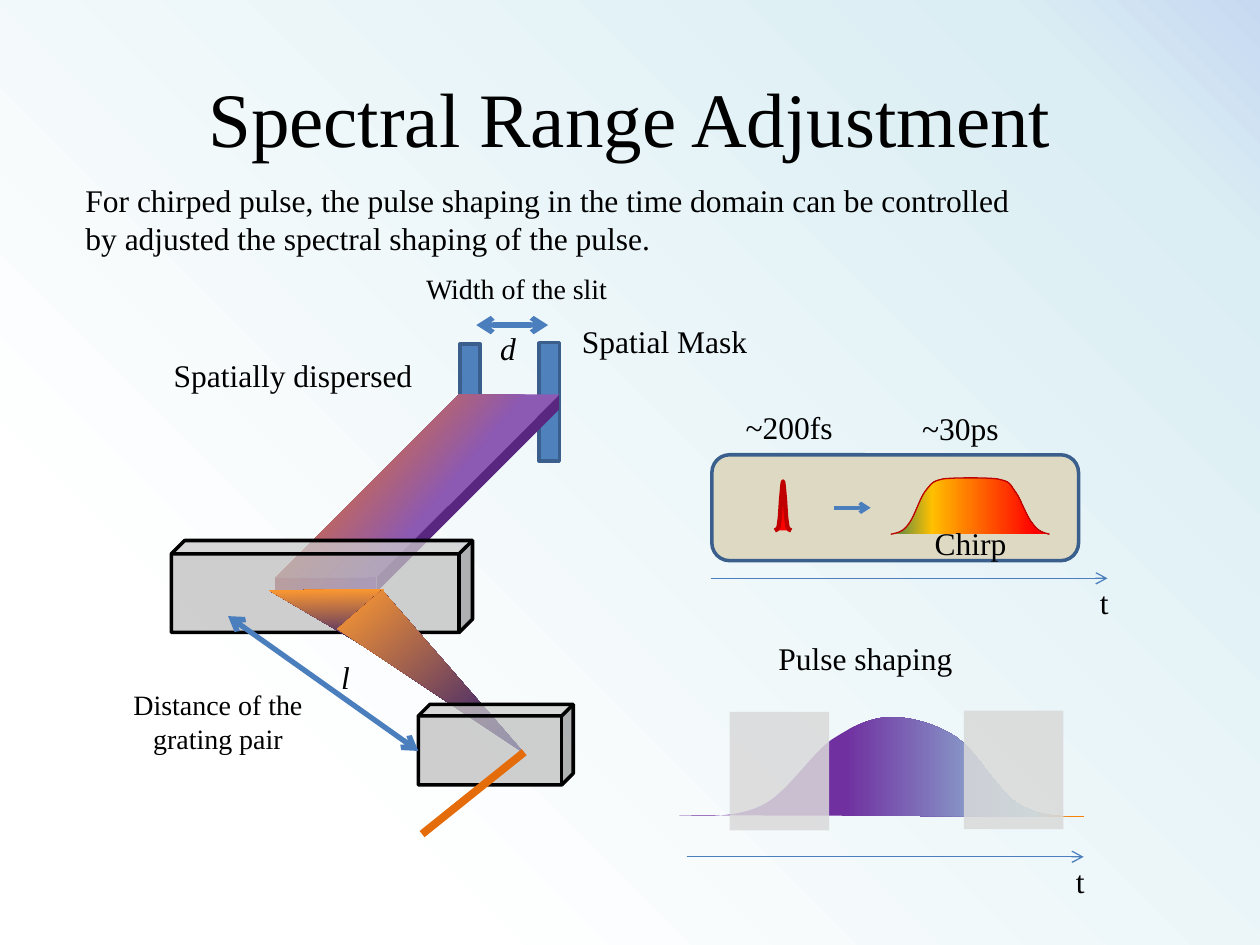
from lxml.etree import SubElement
from pptx import Presentation
from pptx.dml.color import RGBColor
from pptx.enum.shapes import MSO_CONNECTOR, MSO_SHAPE as SHAPE
from pptx.enum.text import MSO_ANCHOR, MSO_AUTO_SIZE, PP_ALIGN as ALIGN
from pptx.oxml.ns import qn
from pptx.util import Inches, Pt

FONT = "Times New Roman"
BLACK = RGBColor(0x00, 0x00, 0x00)
WHITE = RGBColor(0xFF, 0xFF, 0xFF)
SKY = RGBColor(0xC6, 0xD9, 0xF1)
AQUA = RGBColor(0xDB, 0xEE, 0xF4)
BLUE = RGBColor(0x4F, 0x81, 0xBD)
ARROW = RGBColor(0x4B, 0x7E, 0xBC)
EDGE = RGBColor(0x3A, 0x5F, 0x8C)
TAN = RGBColor(0xDD, 0xD9, 0xC3)
SILVER = RGBColor(0xD9, 0xD9, 0xD9)
GRAY = RGBColor(0xBF, 0xBF, 0xBF)
PURPLE = RGBColor(0x70, 0x30, 0xA0)
TEAL = RGBColor(0x93, 0xCD, 0xDD)
ORANGE = RGBColor(0xFF, 0x82, 0x00)
BRICK = RGBColor(0xAD, 0x40, 0x3D)
NAVY = RGBColor(0x00, 0x00, 0x82)
AMBER = RGBColor(0xFF, 0x9A, 0x30)
OLIVE = RGBColor(0x77, 0x93, 0x3C)
GOLD = RGBColor(0xFF, 0xC0, 0x00)
RED = RGBColor(0xFF, 0x00, 0x00)
DARK_RED = RGBColor(0xC0, 0x00, 0x00)
BEAM = RGBColor(0xE4, 0x6C, 0x0A)


def set_gradient(fill, element, stops, angle):
    fill.gradient()
    fill.gradient_angle = (360 - angle) % 360
    gs_list = element.find(".//" + qn("a:gsLst"))
    for gs in list(gs_list):
        gs_list.remove(gs)
    for pos, color in stops:
        gs = SubElement(gs_list, qn("a:gs"), pos=str(pos * 1000))
        SubElement(gs, qn("a:srgbClr"), val=str(color))


def style(s, color=None, alpha=None, stops=None, angle=0, line=None, width=2):
    s.shadow.inherit = False
    if stops:
        set_gradient(s.fill, s.element, stops, angle)
    else:
        s.fill.solid()
        s.fill.fore_color.rgb = color
    if alpha:
        clr = s.element.spPr.find(qn("a:solidFill")).find(qn("a:srgbClr"))
        SubElement(clr, qn("a:alpha"), val=str(alpha * 1000))
    if line is None:
        s.line.fill.background()
    else:
        s.line.color.rgb = line
        s.line.width = Pt(width)
    return s


def add_shape(shapes, kind, x, y, w, h, adj=None, **look):
    s = shapes.add_shape(kind, Inches(x), Inches(y), Inches(w), Inches(h))
    if adj is not None:
        s.adjustments[0] = adj
    return style(s, **look)


def add_line(shapes, x1, y1, x2, y2, width, color=ARROW, ends=("tailEnd",)):
    c = shapes.add_connector(MSO_CONNECTOR.STRAIGHT, Inches(x1), Inches(y1),
                             Inches(x2), Inches(y2))
    c.line.color.rgb = color
    c.line.width = Pt(width)
    ln = c.element.spPr.find(qn("a:ln"))
    for end in ends:
        SubElement(ln, qn("a:" + end), type="arrow")
    SubElement(c.element.spPr, qn("a:effectLst"))


def add_text(shapes, text, x, y, w, h=0.4, size=18, align=ALIGN.LEFT,
             italic=False, wrap=True):
    s = shapes.add_textbox(Inches(x), Inches(y), Inches(w), Inches(h))
    tf = s.text_frame
    tf.word_wrap = wrap
    tf.auto_size = MSO_AUTO_SIZE.SHAPE_TO_FIT_TEXT
    tf.text = text
    p = tf.paragraphs[0]
    p.alignment = align
    r = p.runs[0]
    r.font.name, r.font.size, r.font.italic = FONT, Pt(size), italic
    r.font.color.rgb = BLACK
    return tf


def add_outline(shapes, x, y, points, **look):
    pts = [(Inches(x + px), Inches(y + py)) for px, py in points]
    builder = shapes.build_freeform(*pts[0])
    builder.add_line_segments(pts[1:], close=False)
    return style(builder.convert_to_shape(), **look)


def bezier(points, steps=12):
    curve = [points[0]]
    for i in range(0, len(points) - 1, 3):
        quad = points[i:i + 4]
        for n in range(1, steps + 1):
            t = n / steps
            weights = ((1 - t) ** 3, 3 * t * (1 - t) ** 2, 3 * t * t * (1 - t), t ** 3)
            curve.append(tuple(sum(k * p[axis] for k, p in zip(weights, quad))
                               for axis in (0, 1)))
    return curve


def time_axis(shapes, x, y):
    add_line(shapes, x, y, x + 3.15, y, 0.75)
    add_text(shapes, "t", x + 2.99, y - 0.01, 0.39)


def heading(shapes, x, y):
    tf = add_text(shapes, "Spectral Range Adjustment", x, y, 9, 1.25, 44, ALIGN.CENTER)
    tf.auto_size = MSO_AUTO_SIZE.NONE
    tf.vertical_anchor = MSO_ANCHOR.MIDDLE
    add_text(shapes, "For chirped pulse, the pulse shaping in the time domain can be "
             "controlled by adjusted the spectral shaping of the pulse.",
             x + 0.08, y + 1.09, 7.75, 0.71)


def shaping_plot(shapes, x, y):
    pulse = [(0, 1.45), (0.22, 1.46), (0.45, 1.47), (0.66, 1.37), (0.86, 1.27),
             (1.04, 0.97), (1.21, 0.85), (1.38, 0.74), (1.51, 0.68), (1.67, 0.67),
             (1.84, 0.67), (2.03, 0.72), (2.2, 0.83), (2.37, 0.95), (2.52, 1.25),
             (2.69, 1.36), (2.86, 1.46), (3.03, 1.46), (3.21, 1.46)]
    add_outline(shapes, x, y, bezier(pulse),
                stops=[(41, PURPLE), (88, TEAL), (97, ORANGE)])
    for dx, dy in ((0.4, 0.63), (2.26, 0.62)):
        add_shape(shapes, SHAPE.RECTANGLE, x + dx, y + dy, 0.79, 0.94,
                  color=SILVER, alpha=85)
    time_axis(shapes, x + 0.06, y + 1.78)
    add_text(shapes, "Pulse shaping", x + 0.69, y, 1.6, wrap=False)


def chirp_panel(shapes, x, y):
    add_shape(shapes, SHAPE.ROUNDED_RECTANGLE, x, y, 2.91, 0.84, color=TAN, line=EDGE)
    chirped = [(0, 0.45), (0.05, 0.44), (0.1, 0.43), (0.14, 0.37), (0.19, 0.31),
               (0.23, 0.16), (0.28, 0.1), (0.33, 0.04), (0.33, 0.03), (0.42, 0.01),
               (0.52, 0), (0.75, 0), (0.84, 0.01), (0.94, 0.03), (0.94, 0.04),
               (0.98, 0.1), (1.03, 0.16), (1.08, 0.32), (1.13, 0.37), (1.17, 0.43),
               (1.22, 0.44), (1.26, 0.45)]
    add_outline(shapes, x + 1.42, y + 0.18, bezier(chirped), line=DARK_RED, width=0.75,
                stops=[(7, OLIVE), (26, GOLD), (46, ORANGE), (91, RED)])
    rise = [(0, 0.39), (0.02, 0.38), (0.03, 0.36), (0.04, 0.29), (0.05, 0.14),
            (0.06, 0.03)]
    fall = [(0.13 - px, py) for px, py in reversed(rise)]
    add_outline(shapes, x + 0.5, y + 0.21, rise + [(0.065, 0)] + fall,
                color=RED, line=DARK_RED, width=2.5)
    add_line(shapes, x + 0.97, y + 0.42, x + 1.26, y + 0.42, 2)
    add_text(shapes, "Chirp", x + 1.67, y + 0.5, 1.2)
    time_axis(shapes, x - 0.01, y + 0.98)
    add_text(shapes, "~200fs", x + 0.17, y - 0.42, 1.13)
    add_text(shapes, "~30ps", x + 1.57, y - 0.41, 1.13)


def grating(shapes, x, y, w, h):
    add_shape(shapes, SHAPE.CUBE, x, y, w, h, adj=0.145, color=GRAY, alpha=75, line=BLACK)


def grating_setup(shapes, x, y):
    for dx, dy in ((2.78, 0.62), (3.41, 0.61)):
        add_shape(shapes, SHAPE.RECTANGLE, x + dx, y + dy, 0.16, 0.94,
                  color=BLUE, line=EDGE)
    add_shape(shapes, SHAPE.CUBE, x + 1.32, y + 1.02, 2.25, 1.57, adj=0.925,
              stops=[(44, PURPLE), (66, BRICK)], angle=220)
    grating(shapes, x + 0.49, y + 2.18, 2.39, 0.73)
    fan = shapes.add_group_shape().shapes
    for dx, dy, w, h, turn in ((1.45, 2.39, 0.55, 0.91, 89.3),
                               (1.69, 3.14, 1.72, 0.47, 48.9)):
        s = add_shape(fan, SHAPE.RIGHT_TRIANGLE, x + dx, y + dy, w, h,
                      stops=[(0, NAVY), (100, AMBER)], angle=180)
        s.rotation = turn
        s.element.spPr.find(qn("a:xfrm")).set("flipV", "1")
    grating(shapes, x + 2.45, y + 3.48, 1.23, 0.64)
    add_line(shapes, x + 3.29, y + 3.86, x + 2.48, y + 4.51, 4.5, BEAM, ())

    both = ("headEnd", "tailEnd")
    add_line(shapes, x + 0.94, y + 2.78, x + 2.45, y + 3.85, 3, ends=both)
    add_line(shapes, x + 2.91, y + 0.47, x + 3.48, y + 0.47, 3, ends=both)
    add_text(shapes, "Spatially dispersed", x + 0.41, y + 0.67, 2.12, wrap=False)
    add_text(shapes, "Spatial Mask", x + 3.65, y + 0.4, 1.53, wrap=False)
    add_text(shapes, "d", x + 3, y + 0.45, 0.39, italic=True)
    add_text(shapes, "l", x + 1.74, y + 3.06, 0.39, italic=True)
    add_text(shapes, "Distance of the grating pair", x, y + 3.3, 1.72, 0.64, 16,
             ALIGN.CENTER)
    add_text(shapes, "Width of the slit", x + 1.94, y, 2.58, 0.37, 16, ALIGN.CENTER)


def main():
    prs = Presentation()
    prs.slide_width, prs.slide_height = Inches(10), Inches(7.5)
    slide = prs.slides.add_slide(prs.slide_layouts[6])
    set_gradient(slide.background.fill, slide.element,
                 [(0, SKY), (12, AQUA), (80, WHITE)], 135)
    heading(slide.shapes, 0.5, 0.3)
    shaping_plot(slide.shapes, 5.39, 5.02)
    chirp_panel(slide.shapes, 5.65, 3.61)
    grating_setup(slide.shapes, 0.87, 2.11)
    prs.save("out.pptx")


if __name__ == "__main__":
    main()
